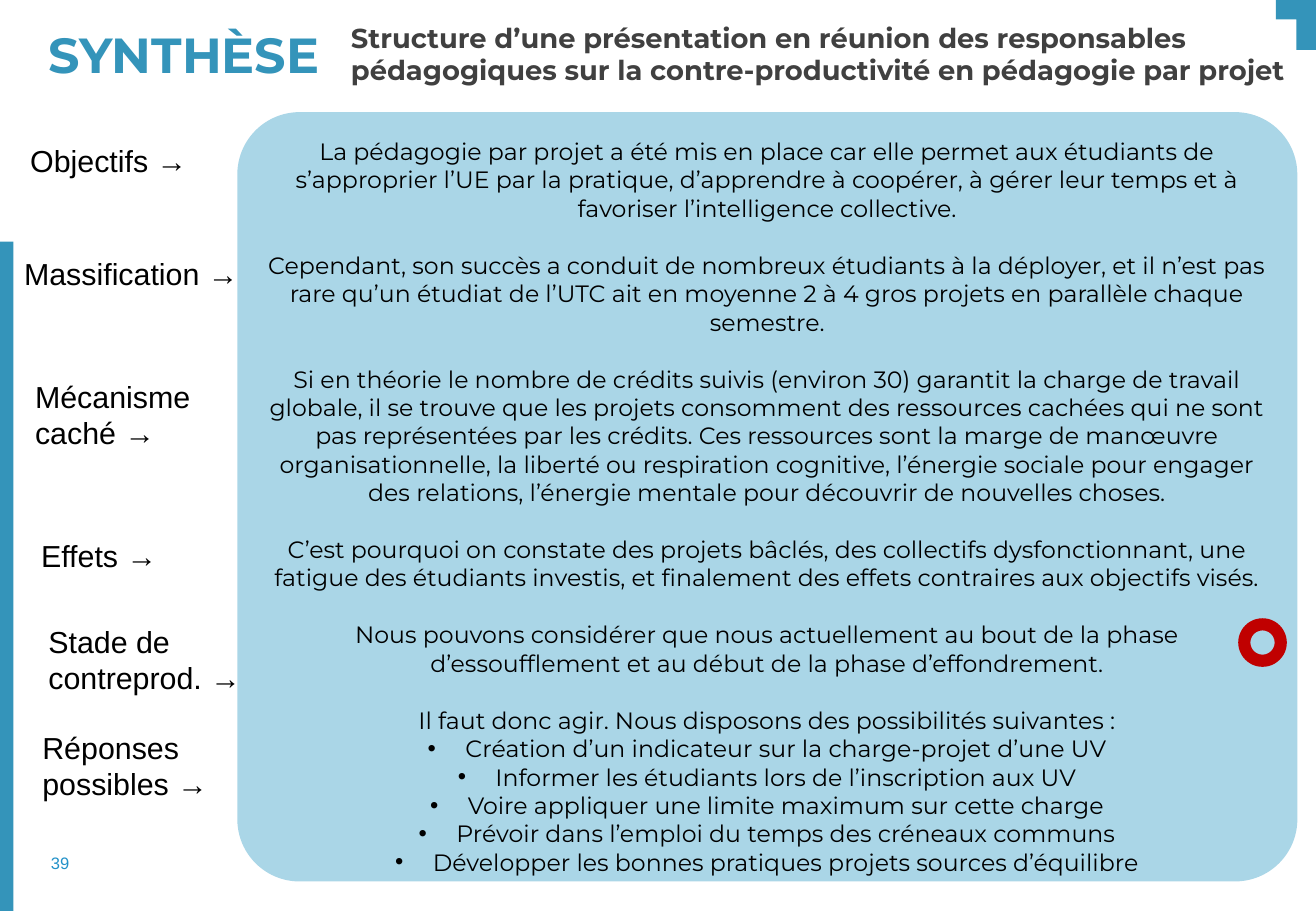
"""Build the synthesis slide: a summary panel with a label beside each step."""
from dataclasses import dataclass

from lxml import etree
from pptx import Presentation, util as u
from pptx.dml.color import RGBColor
from pptx.enum import shapes, text
from pptx.oxml.ns import qn

PX = 9144
SHAPE = shapes.MSO_SHAPE
ALIGN = text.PP_ALIGN
ANCHOR = text.MSO_ANCHOR


@dataclass(frozen=True)
class Theme:
    accent: str = "3494BA"
    number: str = "2392C9"
    heading: str = "404040"
    panel: str = "AAD6E7"
    marker: str = "C00000"
    ink: str = "000000"
    display: str = "Montserrat"
    plain: str = "Arial"
    title_pt: float = 29.2
    subtitle_pt: float = 16.2
    body_pt: float = 14
    label_pt: float = 18
    number_pt: float = 9.8
    gap_pt: float = 17


T = Theme()

CORNER = [(1050, 0), (1083, 0), (1083, 41), (1067, 41), (1067, 16), (1050, 16)]

LABELS = [
    (15, 112, 151, "Objectifs →"),
    (10, 205, 198, "Massification →"),
    (19, 306, 149, "Mécanisme\ncaché →"),
    (24, 437, 117, "Effets →"),
    (30, 508, 186, "Stade de\ncontreprod. →"),
    (25, 595, 158, "Réponses\npossibles →"),
]

SUMMARY = [
    "La pédagogie par projet a été mis en place car elle permet aux étudiants de "
    "s’approprier l’UE par la pratique, d’apprendre à coopérer, à gérer leur temps et à "
    "favoriser l’intelligence collective.",
    "Cependant, son succès a conduit de nombreux étudiants à la déployer, et il n’est pas "
    "rare qu’un étudiat de l’UTC ait en moyenne 2 à 4 gros projets en parallèle chaque "
    "semestre.",
    "Si en théorie le nombre de crédits suivis (environ 30) garantit la charge de travail "
    "globale, il se trouve que les projets consomment des ressources cachées qui ne sont "
    "pas représentées par les crédits. Ces ressources sont la marge de manœuvre "
    "organisationnelle, la liberté ou respiration cognitive, l’énergie sociale pour engager "
    "des relations, l’énergie mentale pour découvrir de nouvelles choses.",
    "C’est pourquoi on constate des projets bâclés, des collectifs dysfonctionnant, une "
    "fatigue des étudiants investis, et finalement des effets contraires aux objectifs visés.",
    "Nous pouvons considérer que nous actuellement au bout de la phase "
    "d’essoufflement et au début de la phase d’effondrement.",
    "Il faut donc agir. Nous disposons des possibilités suivantes :",
]

ACTIONS = [
    "Création d’un indicateur sur la charge-projet d’une UV",
    "Informer les étudiants lors de l’inscription aux UV",
    "Voire appliquer une limite maximum sur cette charge",
    "Prévoir dans l’emploi du temps des créneaux communs",
    "Développer les bonnes pratiques projets sources d’équilibre",
]


def box(*lengths):
    return [n * PX for n in lengths]


def set_margins(tf, left, top, right, bottom):
    tf.margin_left, tf.margin_top, tf.margin_right, tf.margin_bottom = box(
        left, top, right, bottom)


def add_bullet(p, indent=31):
    pPr = p._p.get_or_add_pPr()
    pPr.set("marL", str(indent * PX))
    pPr.set("indent", str(-indent * PX))
    etree.SubElement(pPr, qn("a:buFont")).set("typeface", "Arial")
    etree.SubElement(pPr, qn("a:buChar")).set("char", "•")


def write(tf, lines, *, size, color, font, bold=False, align=ALIGN.LEFT,
          gap=0, spacing=None, bullet=False, append=False):
    for i, line in enumerate(lines):
        first = i == 0 and not append
        p = tf.paragraphs[0] if first else tf.add_paragraph()
        p.alignment = align
        if gap and not first:
            p.space_before = u.Pt(gap)
        if spacing:
            p.line_spacing = spacing
        if bullet:
            add_bullet(p)
        r = p.add_run()
        r.text = line
        r.font.size, r.font.bold, r.font.name = u.Pt(size), bold, font
        r.font.color.rgb = RGBColor.from_string(color)


def add_text(s, at, content, *, wrap=True, anchor=ANCHOR.TOP,
             margins=(10, 5, 10, 5), **fmt):
    tf = s.shapes.add_textbox(*box(*at)).text_frame
    tf.word_wrap = wrap
    tf.vertical_anchor = anchor
    if not wrap:
        tf.auto_size = text.MSO_AUTO_SIZE.SHAPE_TO_FIT_TEXT
    set_margins(tf, *margins)
    write(tf, content.split("\n"), **fmt)


def paint(sp, fill):
    sp.shadow.inherit = False
    sp.fill.solid()
    sp.fill.fore_color.rgb = RGBColor.from_string(fill)
    sp.line.fill.background()
    return sp


def add_block(s, kind, at, fill):
    return paint(s.shapes.add_shape(kind, *box(*at)), fill)


def add_outline(s, points, fill):
    fb = s.shapes.build_freeform(*points[0], scale=PX)
    fb.add_line_segments(points[1:], close=True)
    return paint(fb.convert_to_shape(), fill)


def add_panel(s):
    sp = add_block(s, SHAPE.ROUNDED_RECTANGLE, (196, 93, 871, 632), T.panel)
    sp.adjustments[0] = 0.08
    sp.line.color.rgb = RGBColor.from_string(T.panel)
    sp.line.width = u.Pt(1)
    tf = sp.text_frame
    tf.word_wrap = True
    tf.vertical_anchor = ANCHOR.TOP
    set_margins(tf, 10, 5, 10, 5)
    fmt = dict(size=T.body_pt, color=T.ink, font=T.display, align=ALIGN.CENTER)
    write(tf, SUMMARY, gap=T.gap_pt, **fmt)
    write(tf, ACTIONS, bullet=True, append=True, **fmt)


def main():
    prs = Presentation()
    prs.slide_width, prs.slide_height = box(1083, 750)
    s = prs.slides.add_slide(prs.slide_layouts[6])

    add_outline(s, CORNER, T.accent)
    add_block(s, SHAPE.RECTANGLE, (0, 199, 11, 551), T.accent)
    add_text(s, (14, 697, 43, 27), "39", size=T.number_pt, color=T.number,
             font=T.plain, align=ALIGN.RIGHT, anchor=ANCHOR.MIDDLE,
             margins=(10, 5, 0, 5))
    add_text(s, (279, 17, 800, 82),
             "Structure d’une présentation en réunion des responsables "
             "pédagogiques sur la contre-productivité en pédagogie par projet",
             size=T.subtitle_pt, color=T.heading, font=T.display, bold=True,
             margins=(10, 0, 10, 0))
    add_text(s, (30, 17, 249, 60), "SYNTHÈSE", size=T.title_pt, color=T.accent,
             font=T.display, bold=True, spacing=0.9, anchor=ANCHOR.MIDDLE,
             margins=(10, 0, 10, 0))
    add_panel(s)
    for x, y, w, label in LABELS:
        h = 71 if "\n" in label else 40
        add_text(s, (x, y, w, h), label, wrap=False, size=T.label_pt,
                 color=T.ink, font=T.plain)
    add_block(s, SHAPE.DONUT, (1019, 509, 40, 40), T.marker)

    prs.save("out.pptx")


if __name__ == "__main__":
    main()
